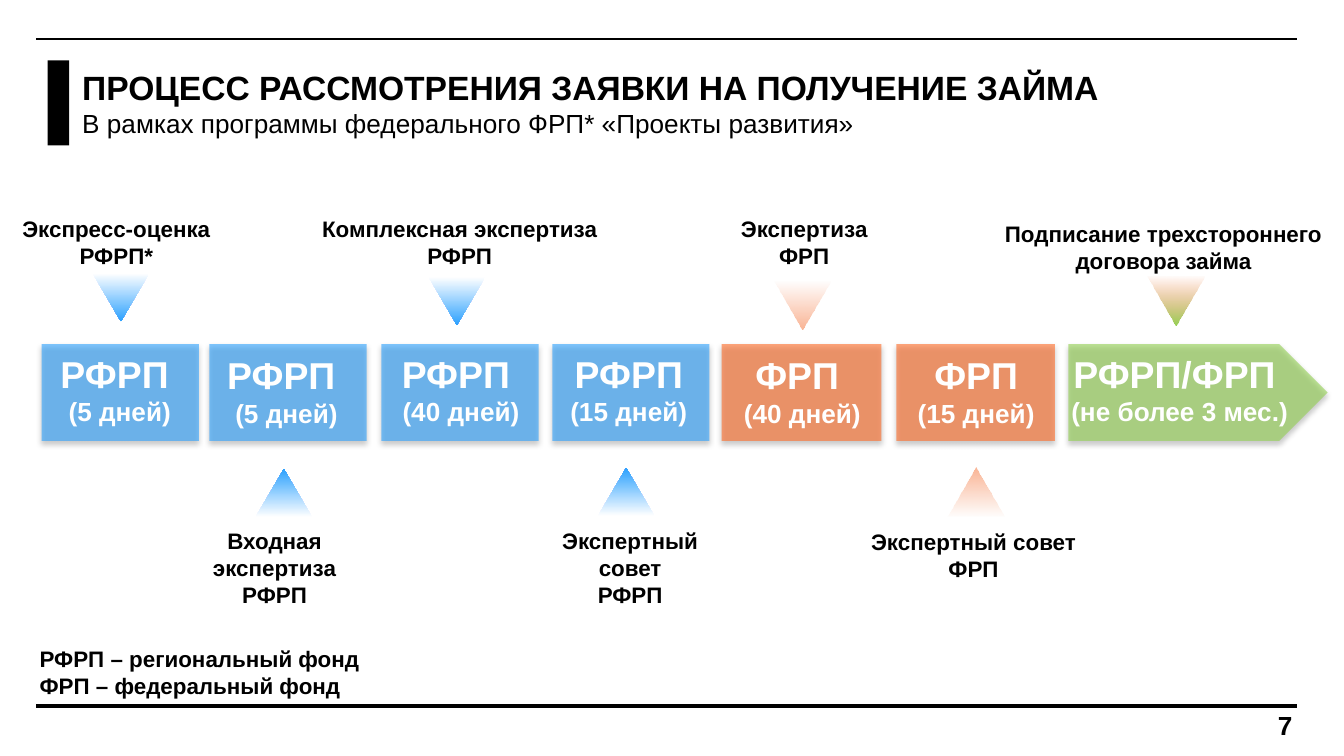
"""Build the slide on how a loan application is reviewed, stage by stage."""
from lxml import etree
from pptx import Presentation
from pptx import util as u
from pptx.dml.color import RGBColor
from pptx.enum import shapes, text
from pptx.oxml.ns import qn

BLACK = RGBColor(0x00, 0x00, 0x00)
WHITE = RGBColor(0xFF, 0xFF, 0xFF)
BLUE = RGBColor(0x2C, 0xA1, 0xFE)
ORANGE = RGBColor(0xFF, 0x6B, 0x26)
DEEP_ORANGE = RGBColor(0xF4, 0x65, 0x24)
GREEN = RGBColor(0x92, 0xD0, 0x50)

HEADING = [("ПРОЦЕСС РАССМОТРЕНИЯ ЗАЯВКИ НА ПОЛУЧЕНИЕ ЗАЙМА", 18, True),
           ("В рамках программы федерального ФРП* «Проекты развития»", 14, False)]
LEGEND = ["РФРП – региональный фонд", "ФРП – федеральный фонд"]
PAGE = "7"

REGIONAL = (BLUE, ((WHITE, 100), (BLUE, 100)))
FEDERAL = (ORANGE, ((DEEP_ORANGE, 0), (DEEP_ORANGE, 50)))
JOINT = (GREEN, ((DEEP_ORANGE, 0), (GREEN, 100)))

# fund, term, style, (box left, width), (caption left, top, width)
STAGES = [
    ("РФРП ", "(5 дней)", REGIONAL, (0.79, 2.97), (0.46, 6.5, 3.61)),
    ("РФРП ", "(5 дней)", REGIONAL, (3.96, 2.97), (3.61, 6.53, 3.61)),
    ("РФРП ", "(40 дней)", REGIONAL, (7.21, 2.97), (6.91, 6.5, 3.61)),
    ("РФРП", "(15 дней)", REGIONAL, (10.44, 2.97), (10.21, 6.5, 3.35)),
    ("ФРП ", "(40 дней)", FEDERAL, (13.64, 3.02), (13.69, 6.53, 2.95)),
    ("ФРП", "(15 дней)", FEDERAL, (16.94, 3), (16.76, 6.53, 3.38)),
    ("РФРП/ФРП ", "(не более 3 мес.)", JOINT, (20.19, 4.9), (19.69, 6.5, 5.21)),
]
STEPS = [
    (["Экспресс-оценка", "РФРП*"], (-0.3, 3.94, 5), (1.75, 5.16)),
    (["Входная", "экспертиза", "РФРП"], (2.69, 9.83, 5), (4.83, 8.86)),
    (["Комплексная экспертиза РФРП"], (5.49, 3.94, 6.4), (8.1, 5.23)),
    (["Экспертный", "совет", "РФРП"], (8.71, 9.83, 6.4), (11.3, 8.84)),
    (["Экспертиза", "ФРП"], (12.9, 3.94, 4.6), (14.63, 5.31)),
    (["Экспертный совет ФРП"], (16.1, 9.86, 4.6), (17.91, 8.84)),
    (["Подписание трехстороннего договора займа"], (18.69, 4.04, 6.6), (21.69, 5.23)),
]
BOX_TOP, BOX_HEIGHT = 6.5, 1.83
POINTER_WIDTH, POINTER_HEIGHT = 1.07, 0.91
RULES = [(0.74, 1.25), (13.34, 2)]


def write(frame, lines, color, align):
    frame.word_wrap = True
    frame.auto_size = text.MSO_AUTO_SIZE.NONE
    frame.vertical_anchor = text.MSO_ANCHOR.TOP
    for index, (words, size, bold) in enumerate(lines):
        paragraph = frame.add_paragraph() if index else frame.paragraphs[0]
        paragraph.alignment = align
        run = paragraph.add_run()
        run.text = words
        run.font.name = "Arial"
        run.font.size = u.Pt(size)
        run.font.bold = bold
        run.font.color.rgb = color


def add_text(slide, left, top, width, height, lines, color=BLACK,
             align=text.PP_ALIGN.CENTER):
    box = slide.shapes.add_textbox(*map(u.Cm, (left, top, width, height)))
    write(box.text_frame, lines, color, align)


def add_block(slide, kind, left, top, width, height):
    block = slide.shapes.add_shape(kind, *map(u.Cm, (left, top, width, height)))
    block.line.fill.background()
    block.shadow.inherit = False
    return block


def fill_solid(block, color):
    block.fill.solid()
    block.fill.fore_color.rgb = color


def set_opacity(block, percents):
    colors = list(block._element.spPr.iter(qn("a:srgbClr")))
    for color, percent in zip(colors, percents):
        if percent < 100:
            etree.SubElement(color, qn("a:alpha"), val=str(percent * 1000))


def add_shadow(block):
    effects = block._element.spPr.find(qn("a:effectLst"))
    shadow = etree.SubElement(effects, qn("a:outerShdw"), blurRad=str(u.Pt(3.1)),
                              dist=str(u.Pt(1.8)), dir="5400000", rotWithShape="0")
    black = etree.SubElement(shadow, qn("a:srgbClr"), val="000000")
    etree.SubElement(black, qn("a:alpha"), val="35000")


def add_rule(slide, top, weight):
    rule = slide.shapes.add_connector(
        shapes.MSO_CONNECTOR.STRAIGHT, *map(u.Cm, (0.69, top, 24.51, top)))
    rule.line.color.rgb = BLACK
    rule.line.width = u.Pt(weight)
    etree.SubElement(rule._element.spPr, qn("a:effectLst"))


def add_stage(slide, fund, term, style, box, caption):
    kind = shapes.MSO_SHAPE.PENTAGON if style is JOINT else shapes.MSO_SHAPE.RECTANGLE
    left, width = box
    block = add_block(slide, kind, left, BOX_TOP, width, BOX_HEIGHT)
    fill_solid(block, style[0])
    set_opacity(block, [60])
    add_shadow(block)
    add_text(slide, *caption, 1.7, [(fund, 20, True), (term, 14, True)], WHITE)


def add_step(slide, lines, label, pointer, stops):
    left, top = pointer
    triangle = add_block(slide, shapes.MSO_SHAPE.ISOSCELES_TRIANGLE, left, top,
                         POINTER_WIDTH, POINTER_HEIGHT)
    triangle.rotation = 180 if top < BOX_TOP else 0
    triangle.fill.gradient()
    triangle.fill.gradient_angle = 90
    for stop, (color, _) in zip(triangle.fill.gradient_stops, stops):
        stop.color.rgb = color
    set_opacity(triangle, [percent for _, percent in stops])
    height = 1.8 if len(lines) == 3 else 1.3
    add_text(slide, *label, height, [(line, 12, True) for line in lines])


def main():
    deck = Presentation()
    deck.slide_width, deck.slide_height = u.Cm(25.4), u.Cm(14.28)
    slide = deck.slides.add_slide(deck.slide_layouts[5])

    title = slide.shapes.title
    title.left, title.top, title.width, title.height = map(u.Cm, (1.3, 1.14, 23.39, 1.63))
    write(title.text_frame, HEADING, BLACK, text.PP_ALIGN.LEFT)
    marker = add_block(slide, shapes.MSO_SHAPE.RECTANGLE, 0.9, 1.14, 0.41, 1.61)
    fill_solid(marker, BLACK)

    for top, weight in RULES:
        add_rule(slide, top, weight)
    for stage, step in zip(STAGES, STEPS):
        add_stage(slide, *stage)
        add_step(slide, *step, stage[2][1])

    add_text(slide, 0.5, 12.07, 19.61, 1.3, [(line, 12, True) for line in LEGEND],
             align=text.PP_ALIGN.LEFT)
    add_text(slide, 23.9, 13.28, 0.8, 0.86, [(PAGE, 14, True)], align=text.PP_ALIGN.LEFT)
    deck.save("out.pptx")


if __name__ == "__main__":
    main()
